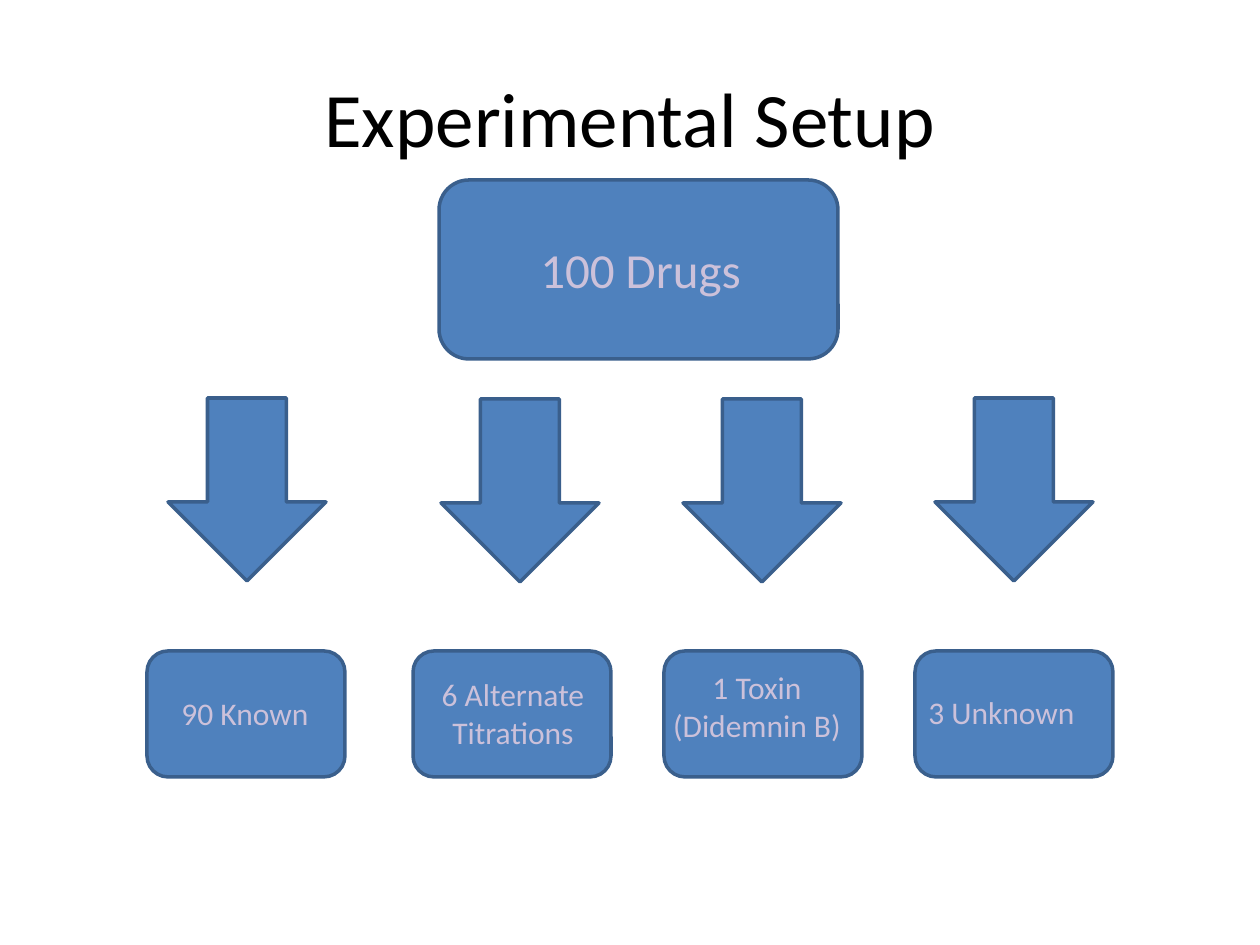
"""Build the Experimental Setup slide: one pool of drugs split into four groups."""
from typing import NamedTuple

from pptx import Presentation
from pptx import util as u
from pptx.dml.color import RGBColor
from pptx.enum import shapes, text

SCALE = 914400 / 126
COLORS = {"fill": "4F81BD", "line": "3A5F8C", "label": "CCC1DA", "title": "000000"}
FONT = "Calibri"
ALIGN = text.PP_ALIGN
SHAPE = shapes.MSO_SHAPE


class Area(NamedTuple):
    left: int
    top: int
    width: int
    height: int

    def emu(self) -> list[int]:
        return [round(length * SCALE) for length in self]


class Branch(NamedTuple):
    label: str
    arrow: Area
    box: Area
    label_area: Area
    align: ALIGN = ALIGN.CENTER


BRANCHES = [
    Branch("90 Known", Area(168, 398, 158, 183), Area(147, 651, 198, 126),
           Area(169, 688, 158, 89), ALIGN.LEFT),
    Branch("6 Alternate Titrations", Area(441, 399, 158, 183), Area(413, 651, 198, 126),
           Area(425, 669, 176, 89)),
    Branch("1 Toxin (Didemnin B)", Area(683, 399, 158, 183), Area(664, 651, 198, 126),
           Area(658, 662, 198, 127)),
    Branch("3 Unknown", Area(935, 398, 158, 183), Area(915, 651, 198, 126),
           Area(910, 687, 183, 89)),
]


def write(frame, words: str, *, size: int, color: str, align: ALIGN = ALIGN.CENTER) -> None:
    frame.word_wrap = True
    para = frame.paragraphs[0]
    para.alignment = align
    span = para.add_run()
    span.text = words
    span.font.name = FONT
    span.font.size = u.Pt(size)
    span.font.color.rgb = RGBColor.from_string(COLORS[color])


def add_block(parent, kind: SHAPE, area: Area) -> None:
    block = parent.add_shape(kind, *area.emu())
    block.shadow.inherit = False
    block.fill.solid()
    block.fill.fore_color.rgb = RGBColor.from_string(COLORS["fill"])
    block.line.color.rgb = RGBColor.from_string(COLORS["line"])
    block.line.width = u.Pt(2)


def add_label(parent, words: str, area: Area, *, size: int = 18,
              align: ALIGN = ALIGN.CENTER) -> None:
    box = parent.add_textbox(*area.emu())
    write(box.text_frame, words, size=size, color="label", align=align)


def add_title(page, words: str, area: Area) -> None:
    title = page.shapes.title
    title.left, title.top, title.width, title.height = area.emu()
    title.text_frame.vertical_anchor = text.MSO_ANCHOR.MIDDLE
    write(title.text_frame, words, size=44, color="title")


def main() -> None:
    deck = Presentation()
    deck.slide_width, deck.slide_height = u.Inches(10), u.Inches(7.5)
    page = deck.slides.add_slide(deck.slide_layouts[5])
    add_title(page, "Experimental Setup", Area(63, 38, 1134, 158))

    pool = page.shapes.add_group_shape().shapes
    add_block(pool, SHAPE.ROUNDED_RECTANGLE, Area(439, 180, 399, 179))
    add_label(pool, "100 Drugs", Area(504, 233, 273, 72), size=28)

    for branch in BRANCHES:
        add_block(page.shapes, SHAPE.DOWN_ARROW, branch.arrow)
        add_block(page.shapes, SHAPE.ROUNDED_RECTANGLE, branch.box)
        add_label(page.shapes, branch.label, branch.label_area, align=branch.align)

    deck.save("out.pptx")


if __name__ == "__main__":
    main()
